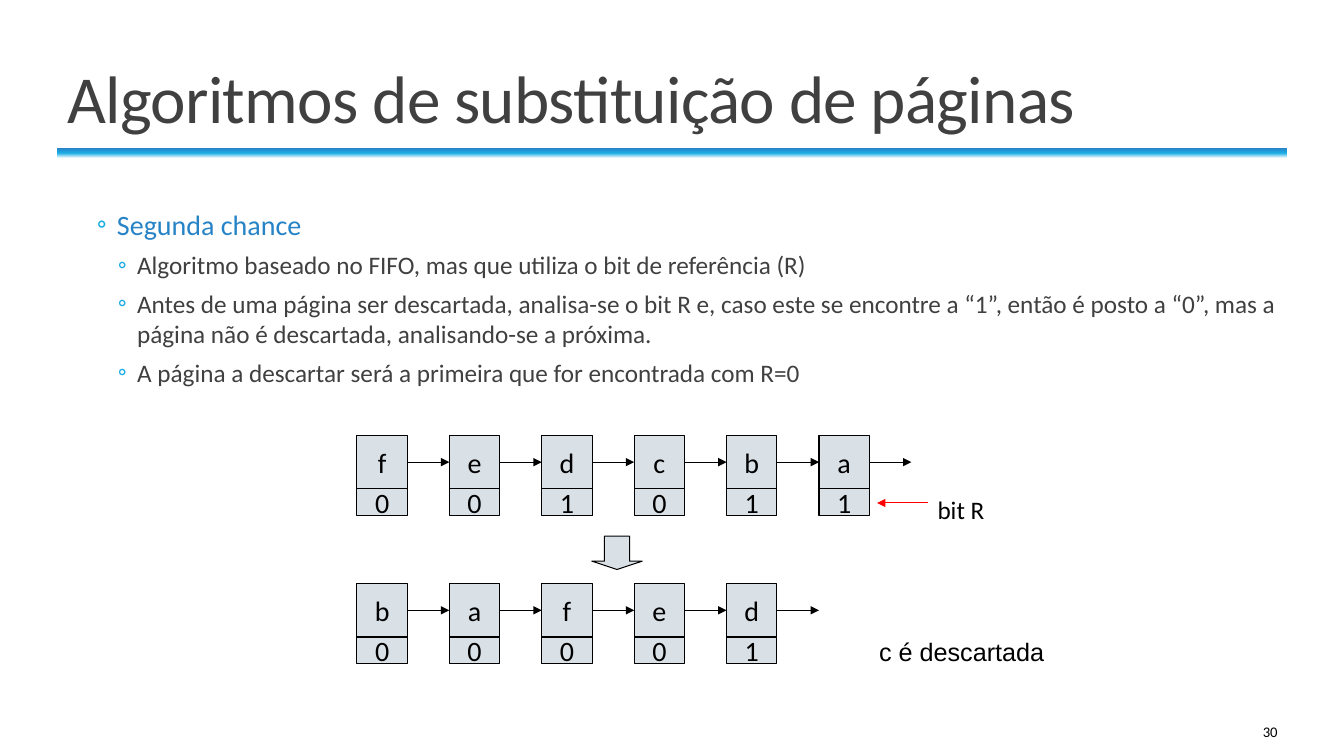
from lxml import etree
from pptx import Presentation
from pptx.dml.color import RGBColor
from pptx.enum.shapes import MSO_CONNECTOR, MSO_SHAPE
from pptx.enum.text import MSO_ANCHOR, PP_ALIGN
from pptx.oxml import parse_xml
from pptx.oxml.ns import qn
from pptx.util import Inches, Pt

RECT, DOWN = MSO_SHAPE.RECTANGLE, MSO_SHAPE.DOWN_ARROW
LINE = MSO_CONNECTOR.STRAIGHT
TOP, MIDDLE, BOTTOM = MSO_ANCHOR.TOP, MSO_ANCHOR.MIDDLE, MSO_ANCHOR.BOTTOM
LEFT, CENTER, RIGHT = PP_ALIGN.LEFT, PP_ALIGN.CENTER, PP_ALIGN.RIGHT
NS = "http://schemas.openxmlformats.org/drawingml/2006/main"
BLACK, GREY, PALE, RED = "000000", "404040", "D9E0E6", "FF0000"
BLUE, CYAN = "2683C6", "1CADE4"
hue = RGBColor.from_string

deck = Presentation()
deck.slide_width, deck.slide_height = Inches(13.33), Inches(7.5)
slide = deck.slides.add_slide(deck.slide_layouts[6])
shapes = slide.shapes


def write(par, text, size, tint=BLACK, face="Calibri", align=LEFT):
    """Put one styled run into a paragraph and return the run."""
    par.alignment = align
    run = par.add_run()
    run.text = text
    look = {"size": Pt(size), "name": face}
    for key, value in look.items():
        setattr(run.font, key, value)
    run.font.color.rgb = hue(tint)
    return run


def arrow(x1, x2, y, tint=BLACK):
    """Draw a level arrow whose head is at x2."""
    link = shapes.add_connector(LINE, Inches(x1), Inches(y), Inches(x2), Inches(y))
    link.line.color.rgb = hue(tint)
    link.line.width = Pt(0.75)
    etree.SubElement(link.line._get_or_add_ln(), qn("a:tailEnd"), type="triangle")
    etree.SubElement(link._element.spPr, qn("a:effectLst"))
    return link


# Frame: margin and content width shared by band, title and body
edge, span = 0.57, 12.2
band = shapes.add_shape(RECT, Inches(edge), Inches(1.47), Inches(span), Inches(0.1))
band.shadow.inherit = False
band.line.fill.background()
stops = "".join(
    f'<a:gs pos="{pos}000"><a:srgbClr val="{tint}"/></a:gs>'
    for pos, tint in [(0, "FFFFFF"), (50, CYAN), (100, BLUE)])
band._element.spPr.find(qn("a:prstGeom")).addnext(parse_xml(
    f'<a:gradFill xmlns:a="{NS}"><a:gsLst>{stops}</a:gsLst>'
    '<a:lin ang="16200000" scaled="0"/></a:gradFill>'))

# Text boxes: place, anchor, then text style
labels = [
    (10.83, 7.06, 1.94, 0.4, MIDDLE, "30", 10.5, BLACK, "Calibri", RIGHT),
    (edge, 0.29, span, 1.12, BOTTOM, "Algoritmos de substituição de páginas",
     48, GREY, "Calibri", LEFT),
    (9.2, 4.85, 0.75, 0.4, TOP, "bit R", 18, BLACK, "Calibri", LEFT),
    (8.62, 6.26, 2, 0.4, TOP, "c é descartada", 18, BLACK, "Arial", LEFT),
]
for x, y, w, h, anchor, *style in labels:
    frame = shapes.add_textbox(*map(Inches, (x, y, w, h))).text_frame
    frame.word_wrap = True
    frame.vertical_anchor = anchor
    run = write(frame.paragraphs[0], *style)
    if anchor == BOTTOM:
        frame.paragraphs[0].line_spacing = 0.85
        run.font._element.set("spc", "-50")

# Bulleted body
body = shapes.add_textbox(*map(Inches, (edge, 2.01, span, 4.82))).text_frame
body.word_wrap = True
body.margin_left = body.margin_right = 0
points = [
    (1, "Segunda chance"),
    (2, "Algoritmo baseado no FIFO, mas que utiliza o bit de referência (R)"),
    (2, "Antes de uma página ser descartada, analisa-se o bit R e, caso este se "
        "encontre a “1”, então é posto a “0”, mas a página não é descartada, "
        "analisando-se a próxima."),
    (2, "A página a descartar será a primeira que for encontrada com R=0"),
]
levels = {1: (0.59, -0.2, 20, BLUE), 2: (0.79, -0.19, 18, GREY)}
for i, (level, text) in enumerate(points):
    par = body.add_paragraph() if i else body.paragraphs[0]
    indent, hang, size, tint = levels[level]
    write(par, text, size, tint)
    par.level = level
    par.space_before, par.space_after = Pt(2), Pt(4)
    props = par._p.get_or_add_pPr()
    props.set("marL", str(Inches(indent)))
    props.set("indent", str(Inches(hang)))
    mark = etree.SubElement(props, qn("a:buClr"))
    etree.SubElement(mark, qn("a:srgbClr"), val=CYAN)
    etree.SubElement(props, qn("a:buFont"), typeface="Calibri")
    etree.SubElement(props, qn("a:buChar"), char="◦")

# Page queues: a letter box over its R bit, linked left to right
start, pitch, wide, tall, low = 3.54, 5.5 / 6, 0.5, 0.53, 0.265
for top, names, bits in [(4.32, "fedcba", "001011"), (5.79, "bafed", "00001")]:
    row = []
    for i, pair in enumerate(zip(names, bits)):
        x = start + i * pitch
        for text, y, h in zip(pair, (top, top + tall), (tall, low)):
            box = shapes.add_shape(RECT, Inches(x), Inches(y), Inches(wide), Inches(h))
            box.shadow.inherit = False
            box.fill.solid()
            box.fill.fore_color.rgb = hue(PALE)
            box.line.color.rgb = hue(BLACK)
            box.line.width = Pt(0.75)
            box.text_frame.word_wrap = False
            box.text_frame.vertical_anchor = MIDDLE
            write(box.text_frame.paragraphs[0], text, 20, align=CENTER)
            if y == top:
                row.append(box)
    for i, box in enumerate(row):
        x = start + i * pitch
        link = arrow(x + wide, x + pitch, top + tall / 2)
        link.begin_connect(box, 3)
        if i + 1 < len(row):
            link.end_connect(row[i + 1], 1)

arrow(9.2, 8.7, 4.99, RED)

step = shapes.add_shape(DOWN, Inches(5.87), Inches(5.32), Inches(wide), Inches(0.33))
step.shadow.inherit = False
step.adjustments[0], step.adjustments[1] = 0.5, 0.25
step.fill.solid()
step.fill.fore_color.rgb = hue(PALE)
step.line.color.rgb = hue(BLACK)
step.line.width = Pt(0.75)

deck.save("out.pptx")
